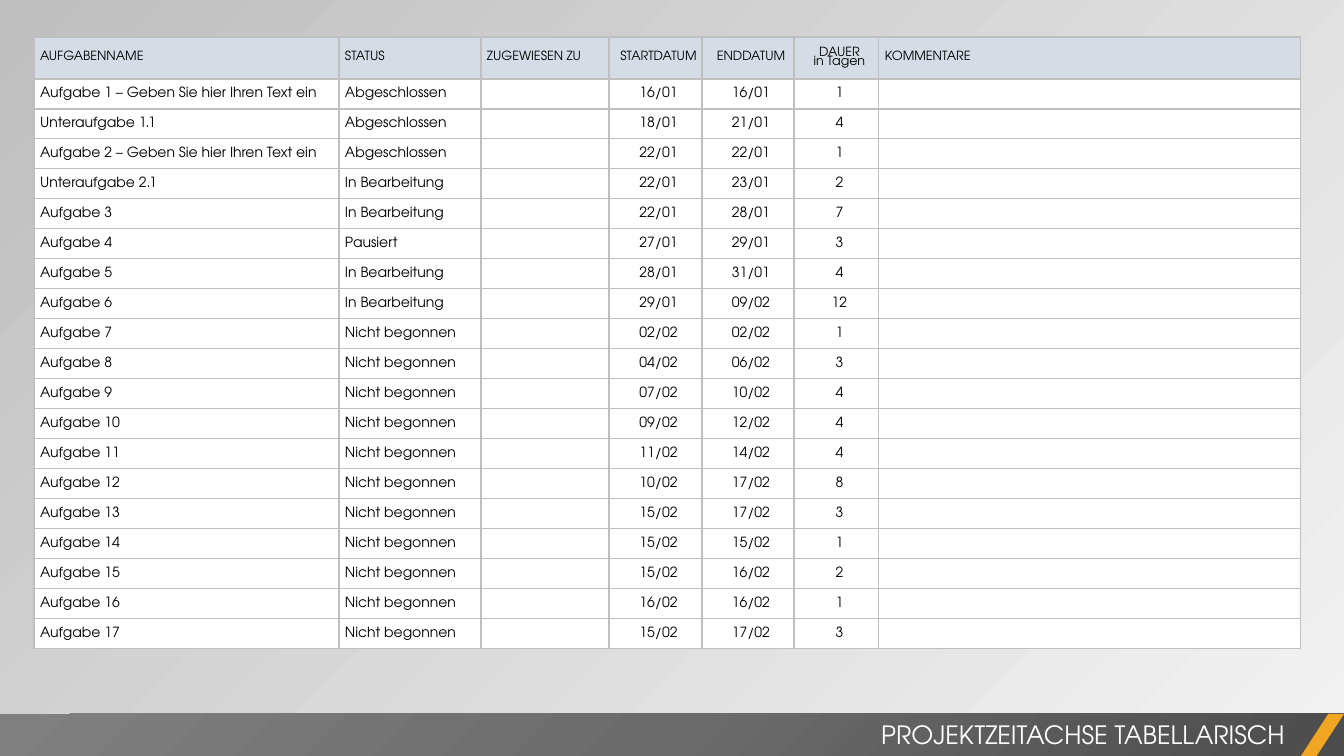
from lxml.etree import SubElement
from pptx import Presentation
from pptx.dml.color import RGBColor
from pptx.enum.shapes import MSO_SHAPE
from pptx.enum.text import MSO_ANCHOR, MSO_AUTO_SIZE, PP_ALIGN
from pptx.oxml import parse_xml
from pptx.oxml.ns import nsdecls, qn
from pptx.util import Pt

COLOURS = {
    "text": "000000",
    "title": "FFFFFF",
    "header": "D6DCE5",
    "cell": "FFFFFF",
    "border": "BFBFBF",
    "accent": "F0A622",
    "light": "F2F2F2",
    "shade": "BFBFBF",
}
FOOTER_STOPS = [(0, "4C4C4C"), (50, "6B6B6B"), (100, "808080")]
FONT = "TeX Gyre Adventor"

HEADINGS = ["AUFGABENNAME", "STATUS", "ZUGEWIESEN ZU", "STARTDATUM",
            "ENDDATUM", "DAUER\nin Tagen", "KOMMENTARE"]
COLUMN_WIDTHS = [305, 142, 128, 93, 92, 85, 422]
CENTRED_COLUMNS = {3, 4, 5}
HEADER_HEIGHT, TASK_HEIGHT = 42, 30

DONE, ACTIVE, PAUSED, OPEN = "Abgeschlossen", "In Bearbeitung", "Pausiert", "Nicht begonnen"
TASKS = [
    ("Aufgabe 1 – Geben Sie hier Ihren Text ein", DONE, "16/01", "16/01", 1),
    ("Unteraufgabe 1.1", DONE, "18/01", "21/01", 4),
    ("Aufgabe 2 – Geben Sie hier Ihren Text ein", DONE, "22/01", "22/01", 1),
    ("Unteraufgabe 2.1", ACTIVE, "22/01", "23/01", 2),
    ("Aufgabe 3", ACTIVE, "22/01", "28/01", 7),
    ("Aufgabe 4", PAUSED, "27/01", "29/01", 3),
    ("Aufgabe 5", ACTIVE, "28/01", "31/01", 4),
    ("Aufgabe 6", ACTIVE, "29/01", "09/02", 12),
    ("Aufgabe 7", OPEN, "02/02", "02/02", 1),
    ("Aufgabe 8", OPEN, "04/02", "06/02", 3),
    ("Aufgabe 9", OPEN, "07/02", "10/02", 4),
    ("Aufgabe 10", OPEN, "09/02", "12/02", 4),
    ("Aufgabe 11", OPEN, "11/02", "14/02", 4),
    ("Aufgabe 12", OPEN, "10/02", "17/02", 8),
    ("Aufgabe 13", OPEN, "15/02", "17/02", 3),
    ("Aufgabe 14", OPEN, "15/02", "15/02", 1),
    ("Aufgabe 15", OPEN, "15/02", "16/02", 2),
    ("Aufgabe 16", OPEN, "16/02", "16/02", 1),
    ("Aufgabe 17", OPEN, "15/02", "17/02", 3),
]


def px(length):
    return round(length * 914400 / 100.8)


def rgb(name):
    return RGBColor.from_string(COLOURS[name])


def write(frame, text, size=10, colour="text", align=PP_ALIGN.LEFT, spacing=1.0):
    frame.text = text
    for paragraph in frame.paragraphs:
        paragraph.alignment = align
        paragraph.line_spacing = spacing
        for run in paragraph.runs:
            run.font.name = FONT
            run.font.size = Pt(size)
            run.font.color.rgb = rgb(colour)
        if not paragraph.runs:
            # Keeps an empty cell from growing to the default text height
            SubElement(paragraph._p, qn("a:endParaRPr"), sz=str(size * 100))


def border_cell(cell):
    properties = cell._tc.get_or_add_tcPr()
    for position, side in enumerate(("lnL", "lnR", "lnT", "lnB")):
        line = parse_xml(
            f'<a:{side} {nsdecls("a")} w="12700"><a:solidFill>'
            f'<a:srgbClr val="{COLOURS["border"]}"/></a:solidFill></a:{side}>')
        properties.insert(position, line)


class SlideBuilder:
    def __init__(self, presentation):
        self.slide = presentation.slides.add_slide(presentation.slide_layouts[5])

    def background(self):
        fill = self.slide.background.fill
        fill.gradient()
        fill.gradient_angle = 135
        for stop, name in zip(fill.gradient_stops, ("light", "shade")):
            stop.color.rgb = rgb(name)

    def task_table(self, left, top):
        height = HEADER_HEIGHT + TASK_HEIGHT * len(TASKS)
        table = self.slide.shapes.add_table(
            len(TASKS) + 1, len(HEADINGS), px(left), px(top),
            px(sum(COLUMN_WIDTHS)), px(height)).table
        table.horz_banding = False
        for column, width in zip(table.columns, COLUMN_WIDTHS):
            column.width = px(width)
        for row in table.rows:
            row.height = px(TASK_HEIGHT)
        table.rows[0].height = px(HEADER_HEIGHT)

        self.table_row(table, 0, HEADINGS, "header", size=9, spacing=0.8)
        for number, (task, status, start, end, days) in enumerate(TASKS, 1):
            self.table_row(table, number, [task, status, "", start, end, str(days), ""], "cell")

    def table_row(self, table, number, texts, fill, **text_format):
        for column, text in enumerate(texts):
            cell = table.cell(number, column)
            cell.fill.solid()
            cell.fill.fore_color.rgb = rgb(fill)
            cell.vertical_anchor = MSO_ANCHOR.MIDDLE
            cell.margin_left = px(6)
            cell.margin_top = cell.margin_right = cell.margin_bottom = 0
            align = PP_ALIGN.CENTER if column in CENTRED_COLUMNS else PP_ALIGN.LEFT
            write(cell.text_frame, text, align=align, **text_format)
            border_cell(cell)

    def shape(self, kind, left, top, width, height, fill):
        shape = self.slide.shapes.add_shape(kind, px(left), px(top), px(width), px(height))
        shape.shadow.inherit = False
        shape.line.fill.background()
        shape.fill.solid()
        shape.fill.fore_color.rgb = rgb(fill)
        return shape

    def footer_bar(self, left, top, width, height):
        bar = self.shape(MSO_SHAPE.RECTANGLE, left, top, width, height, "shade")
        stops = "".join(f'<a:gs pos="{position * 1000}"><a:srgbClr val="{colour}"/></a:gs>'
                        for position, colour in FOOTER_STOPS)
        gradient = parse_xml(
            f'<a:gradFill {nsdecls("a")} rotWithShape="1"><a:gsLst>{stops}</a:gsLst>'
            '<a:path path="circle"><a:fillToRect l="100000" t="100000"/></a:path></a:gradFill>')
        properties = bar._element.spPr
        properties.replace(properties.find(qn("a:solidFill")), gradient)

    def title(self, text, left, top, width, height):
        title = self.slide.shapes.title
        title.left, title.top, title.width, title.height = map(px, (left, top, width, height))
        frame = title.text_frame
        frame.word_wrap = True
        frame.auto_size = MSO_AUTO_SIZE.NONE
        frame.vertical_anchor = MSO_ANCHOR.MIDDLE
        write(frame, text, size=18, colour="title", align=PP_ALIGN.RIGHT)
        # The title must lie in front of the footer bar
        title._element.getparent().append(title._element)


def main():
    presentation = Presentation()
    presentation.slide_width, presentation.slide_height = px(1344), px(756)
    builder = SlideBuilder(presentation)
    builder.background()
    builder.task_table(34, 37)
    builder.footer_bar(0, 714, 1344, 42)
    accent = builder.shape(MSO_SHAPE.PARALLELOGRAM, 1301, 714, 43, 42, "accent")
    accent.adjustments[0] = 0.65
    builder.title("PROJEKTZEITACHSE TABELLARISCH", 529, 714, 766, 40)
    presentation.save("out.pptx")


if __name__ == "__main__":
    main()
